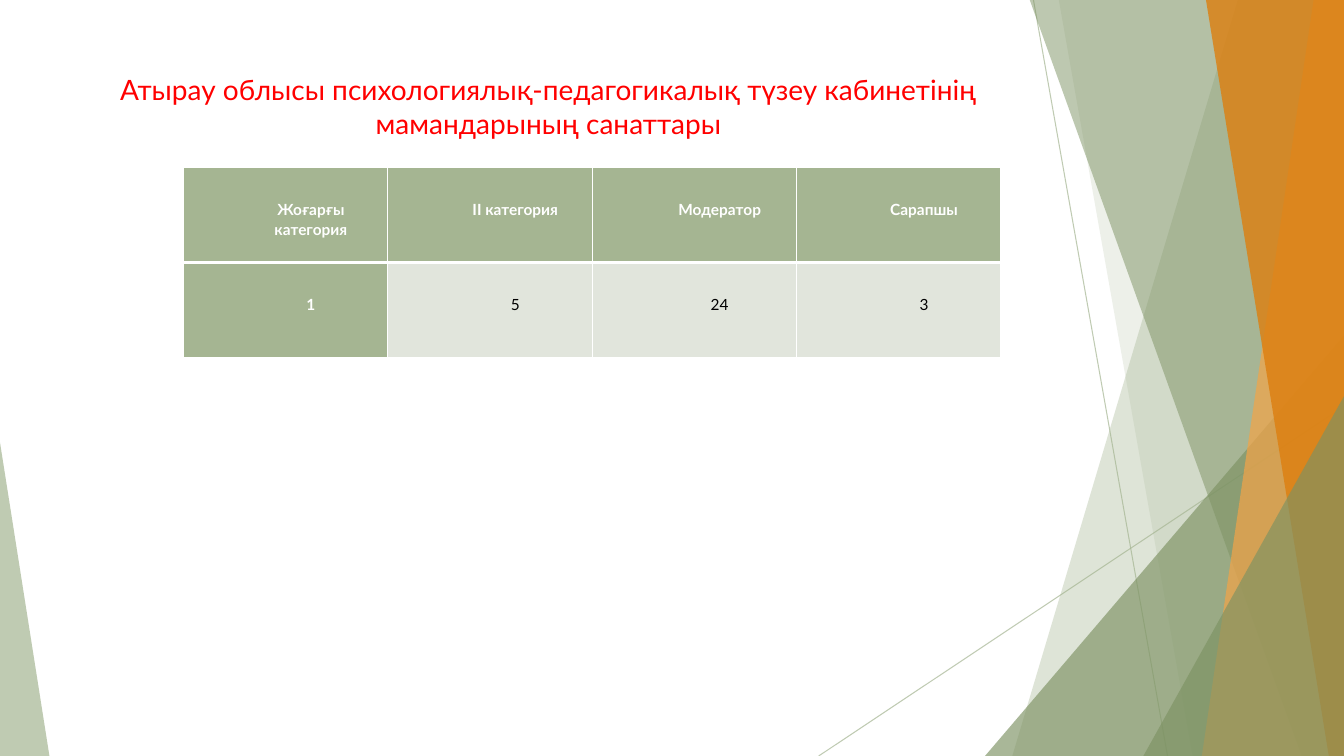
import pptx
import pptx.util
import pptx.dml.color
import pptx.enum.shapes
import pptx.enum.text
import pptx.oxml
import pptx.oxml.ns

Inches = pptx.util.Inches
RGBColor = pptx.dml.color.RGBColor
qn = pptx.oxml.ns.qn

SAGE = RGBColor(0xA5, 0xB5, 0x92)
MOSS = RGBColor(0x7D, 0x92, 0x63)
APRICOT = RGBColor(0xF3, 0xA4, 0x47)
ORANGE = RGBColor(0xDD, 0x7E, 0x0E)
PALE = RGBColor(0xE1, 0xE5, 0xDC)
WHITE = RGBColor(0xFF, 0xFF, 0xFF)
BLACK = RGBColor(0, 0, 0)
RED = RGBColor(0xFF, 0, 0)


def write_text(frame, text, size, color, bold=False, indent=0, spacing=1.0, after=0):
    para = frame.paragraphs[0]
    para.alignment = pptx.enum.text.PP_ALIGN.CENTER
    para.line_spacing = spacing
    para.space_after = pptx.util.Pt(after)
    para._p.get_or_add_pPr().set("marL", str(Inches(indent)))
    span = para.add_run()
    span.text = text
    span.font.name = "Lato"
    span.font.size = pptx.util.Pt(size)
    span.font.bold = bold
    span.font.color.rgb = color


def paint(shape, color, opacity):
    shape.shadow.inherit = False
    shape.fill.solid()
    shape.fill.fore_color.rgb = color
    shape.line.fill.background()
    set_color = shape.element.spPr.find(".//" + qn("a:srgbClr"))
    set_color.append(pptx.oxml.parse_xml(
        f'<a:alpha {pptx.oxml.ns.nsdecls("a")} val="{opacity * 1000}"/>'))


deck = pptx.Presentation()
deck.slide_width = Inches(13.33)
deck.slide_height = Inches(7.5)
page = deck.slides.add_slide(deck.slide_layouts[5])
shapes = page.shapes

for start_x, start_y, end_x in [(10.25, 0, 11.58), (13.33, 4.03, 8.12)]:
    line = shapes.add_connector(
        pptx.enum.shapes.MSO_CONNECTOR.STRAIGHT,
        Inches(start_x), Inches(start_y), Inches(end_x), Inches(7.5))
    line.line.width = pptx.util.Pt(0.75)
    line.line.color.rgb = SAGE
    properties = line.element.spPr
    properties.find(".//" + qn("a:srgbClr")).append(pptx.oxml.parse_xml(
        f'<a:alpha {pptx.oxml.ns.nsdecls("a")} val="70000"/>'))
    properties.append(properties.makeelement(qn("a:effectLst"), {}))

ribbons = [
    ("band", 12.28, 10.04, SAGE, 36),
    ("band", 10.5, 11.83, SAGE, 20),
    ("triangle", (9.77, 3.33, 3.56, 4.17), 1, MOSS, 66),
    ("band", 10.21, 12.91, MOSS, 50),
    ("band", 13.03, 11.92, APRICOT, 70),
    ("band", 11.96, 13.18, ORANGE, 80),
    ("triangle", (11.34, 3.93, 1.99, 3.57), 1, MOSS, 66),
    ("triangle", (0, 4.39, 0.49, 3.11), 0, SAGE, 70),
]
for kind, first, second, color, opacity in ribbons:
    if kind == "band":
        outline = shapes.build_freeform(Inches(first), Inches(-0.01))
        outline.add_line_segments([
            (Inches(x), Inches(y))
            for x, y in [(13.33, -0.01), (13.33, 7.5), (second, 7.5)]])
        ribbon = outline.convert_to_shape()
    else:
        ribbon = shapes.add_shape(
            pptx.enum.shapes.MSO_SHAPE.ISOSCELES_TRIANGLE,
            *[Inches(length) for length in first])
        ribbon.adjustments[0] = second
    paint(ribbon, color, opacity)

title = shapes.title
title.left, title.top = Inches(0.74), Inches(0.67)
title.width, title.height = Inches(9.4), Inches(1.44)
title.text_frame.word_wrap = True
title.text_frame.auto_size = pptx.enum.text.MSO_AUTO_SIZE.NONE
title.text_frame.vertical_anchor = pptx.enum.text.MSO_ANCHOR.TOP
write_text(
    title.text_frame,
    "Атырау облысы психологиялық-педагогикалық түзеу кабинетінің мамандарының санаттары",
    size=20, color=RED)

rows = [
    ["Жоғарғы категория", "ІІ категория", "Модератор", "Сарапшы"],
    ["1", "5", "24", "3"],
]
table = shapes.add_table(
    2, 4, Inches(1.82), Inches(1.66), Inches(8.11), Inches(1.89)).table
table.first_col = True
table.horz_banding = False
for row_index, row in enumerate(rows):
    for column_index, text in enumerate(row):
        cell = table.cell(row_index, column_index)
        heading = row_index == 0 or column_index == 0
        cell.margin_left = cell.margin_right = Inches(0.07)
        cell.margin_top = Inches(0.31)
        cell.margin_bottom = 0
        widths = {"L": 1, "R": 1, "T": 3 if row_index else 1, "B": 1 if row_index else 3}
        for side, width in widths.items():
            cell._tc.get_or_add_tcPr().append(pptx.oxml.parse_xml(
                f'<a:ln{side} {pptx.oxml.ns.nsdecls("a")} w="{pptx.util.Pt(width)}">'
                f'<a:solidFill><a:srgbClr val="{WHITE}"/></a:solidFill></a:ln{side}>'))
        cell.fill.solid()
        cell.fill.fore_color.rgb = SAGE if heading else PALE
        write_text(
            cell.text_frame, text, size=11, color=WHITE if heading else BLACK,
            bold=heading, indent=0.5, spacing=1.07, after=8)

deck.save("out.pptx")
